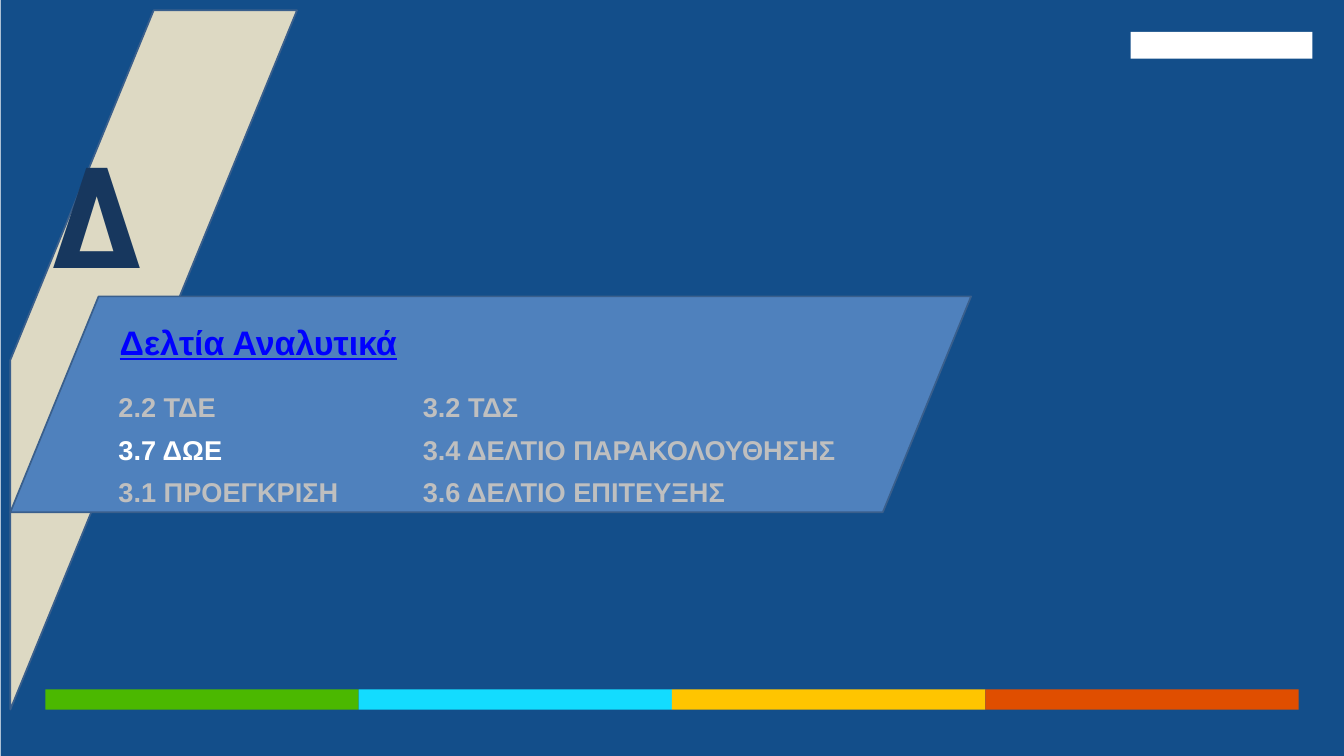
from pptx import Presentation
from pptx.dml.color import RGBColor
from pptx.enum.shapes import MSO_SHAPE
from pptx.enum.text import PP_ALIGN
from pptx.util import Pt

RECTANGLE = MSO_SHAPE.RECTANGLE
DIAGONAL_STRIPE = MSO_SHAPE.DIAGONAL_STRIPE
PARALLELOGRAM = MSO_SHAPE.PARALLELOGRAM
CENTER = PP_ALIGN.CENTER
LEFT = PP_ALIGN.LEFT

COLORS = {
    "background": "134E8A",
    "stripe": "DDD9C3",
    "panel": "4F81BD",
    "outline": "3A5F8C",
    "letter": "17375E",
    "title": "0000FF",
    "inactive": "BFBFBF",
    "active": "FFFFFF",
    "logo": "FFFFFF",
    "green": "4BB800",
    "cyan": "13DCFF",
    "yellow": "FFC500",
    "orange": "E04E00",
}
FOOTER_COLORS = ["green", "cyan", "yellow", "orange"]
ACTIVE_ITEM = "3.7 ΔΩΕ"
# Left edge, width and entries of each column
COLUMNS = [
    (96.5, 348.5, ["2.2 ΤΔΕ", ACTIVE_ITEM, "3.1 ΠΡΟΕΓΚΡΙΣΗ"]),
    (455, 560, ["3.2 ΤΔΣ", "3.4 ΔΕΛΤΙΟ ΠΑΡΑΚΟΛΟΥΘΗΣΗΣ", "3.6 ΔΕΛΤΙΟ ΕΠΙΤΕΥΞΗΣ"]),
]


def rgb(name):
    return RGBColor.from_string(COLORS[name])


def add_panel(slide, kind, left, top, width, height, fill, outline=None):
    shape = slide.shapes.add_shape(kind, Pt(left), Pt(top), Pt(width), Pt(height))
    shape.shadow.inherit = False
    shape.fill.solid()
    shape.fill.fore_color.rgb = rgb(fill)
    if outline:
        shape.line.color.rgb = rgb(outline)
        shape.line.width = Pt(2)
    else:
        shape.line.fill.background()
    return shape


def add_text(slide, left, top, width, height, lines, size, color,
             font="Arial", align=LEFT, spacing=1.3, level=0):
    """Add a bold text box with one paragraph per line and return its paragraphs."""
    box = slide.shapes.add_textbox(Pt(left), Pt(top), Pt(width), Pt(height))
    box.text_frame.word_wrap = True
    box.text_frame.text = "\n".join(lines)
    for paragraph in box.text_frame.paragraphs:
        paragraph.alignment = align
        paragraph.line_spacing = spacing
        paragraph.level = level
        run_font = paragraph.runs[0].font
        run_font.name = font
        run_font.size = Pt(size)
        run_font.bold = True
        run_font.color.rgb = rgb(color)
    return box.text_frame.paragraphs


def add_footer_bar(slide, left, top, width, height):
    for index, color in enumerate(FOOTER_COLORS):
        add_panel(slide, RECTANGLE, left + index * width, top, width, height, color)


def add_columns(slide):
    for left, width, items in COLUMNS:
        paragraphs = add_text(slide, left, 445, width, 154, items, 32, "inactive", level=1)
        for paragraph in paragraphs:
            if paragraph.text == ACTIVE_ITEM:
                paragraph.runs[0].font.color.rgb = rgb("active")


def main():
    presentation = Presentation()
    presentation.slide_width = Pt(1583.28)
    presentation.slide_height = Pt(890.64)
    slide = presentation.slides.add_slide(presentation.slide_layouts[6])

    add_panel(slide, RECTANGLE, 0.7, 0, 1582.58, 890.64, "background")
    add_panel(slide, RECTANGLE, 1332, 37.5, 214, 31.5, "logo")
    add_panel(slide, DIAGONAL_STRIPE, 12.2, 12.2, 337.7, 823.7, "stripe", "outline")
    add_footer_bar(slide, 53.4, 812, 369.1, 24)
    panel = add_panel(slide, PARALLELOGRAM, 12.2, 349.2, 1131.8, 254.2, "panel", "outline")
    panel.adjustments[0] = 0.409

    add_text(slide, 53.4, 146.9, 117.4, 208, ["Δ"], 166, "letter",
             font="Roboto Condensed", align=CENTER, spacing=1)
    title = add_text(slide, 133.9, 360.7, 942.5, 64, ["Δελτία Αναλυτικά"], 40, "title")
    title[0].runs[0].font.underline = True
    add_columns(slide)

    presentation.save("out.pptx")


if __name__ == "__main__":
    main()
